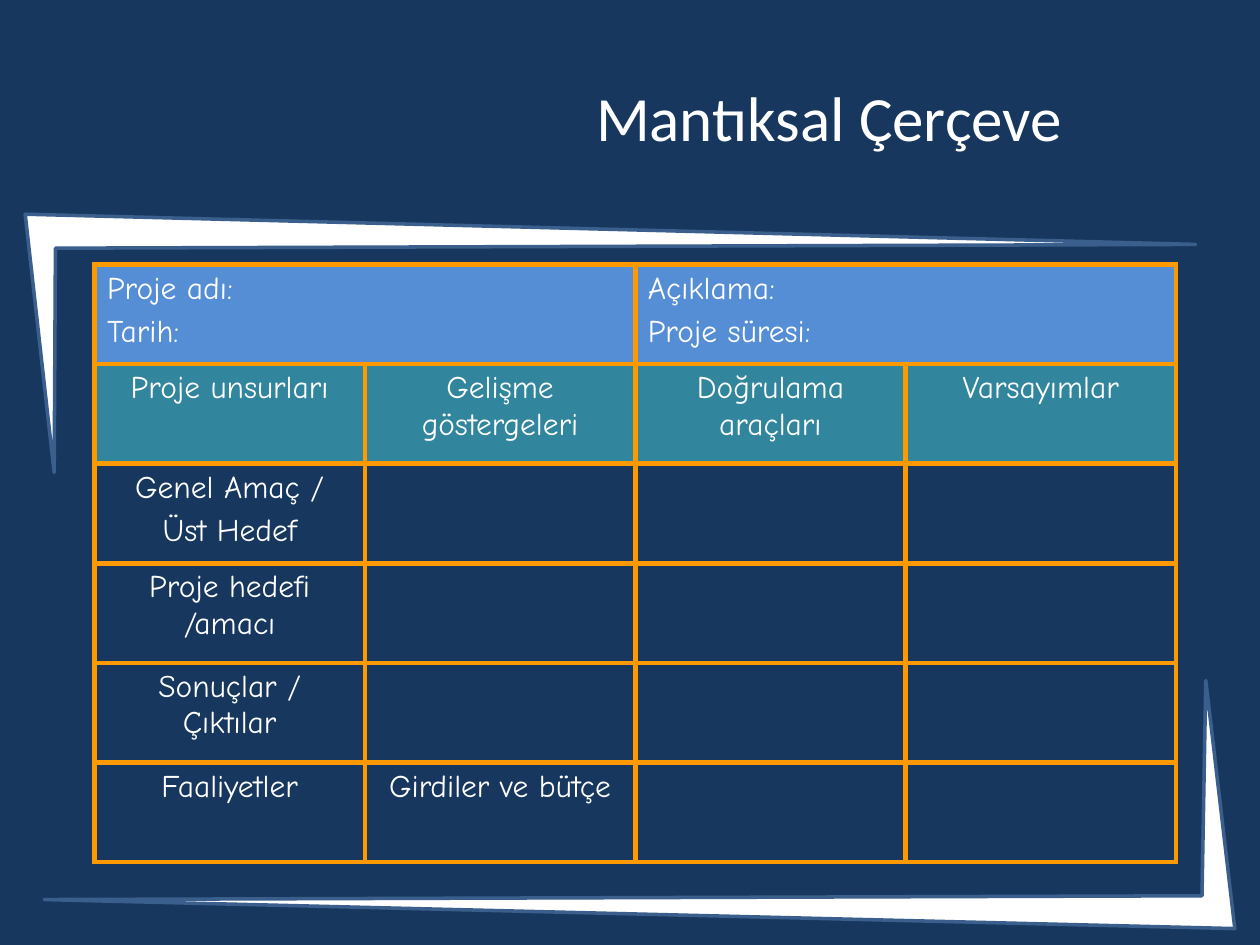
"""Build the logical framework slide: title, two corner brackets and a project table."""
from lxml import etree
from pptx import Presentation
from pptx import util as u
from pptx.dml.color import RGBColor
from pptx.enum import text
from pptx.oxml import ns

NAVY = RGBColor(0x17, 0x37, 0x5E)
WHITE = RGBColor(0xFF, 0xFF, 0xFF)
OUTLINE = RGBColor(0x3A, 0x5F, 0x8C)
BLUE = RGBColor(0x55, 0x8E, 0xD5)
TEAL = RGBColor(0x31, 0x85, 0x9C)
ORANGE = RGBColor(0xFF, 0x99, 0x00)

TOP_BRACKET = [(14.4, 122.4), (683.28, 139.68), (31.68, 141.84), (30.96, 270)]
BOTTOM_BRACKET = [(705.6, 530.64), (25.2, 514.08), (686.88, 511.92), (689.04, 388.8)]

ROWS = [
    ["Proje adı:\nTarih:", "", "Açıklama:\nProje süresi:", ""],
    ["Proje unsurları", "Gelişme göstergeleri", "Doğrulama araçları", "Varsayımlar"],
    ["Genel Amaç /\nÜst Hedef", "", "", ""],
    ["Proje hedefi /amacı", "", "", ""],
    ["Sonuçlar / Çıktılar", "", "", ""],
    ["Faaliyetler", "Girdiler ve bütçe", "", ""],
]
ROW_FILLS = {0: BLUE, 1: TEAL}
COLUMN_WIDTH = 154.5
ROW_HEIGHT = 56.9


def set_font(paragraph, name, size):
    paragraph.font.name = name
    paragraph.font.size = u.Pt(size)
    paragraph.font.color.rgb = WHITE


def add_bracket(slide, points):
    corners = [(u.Pt(x), u.Pt(y)) for x, y in points]
    builder = slide.shapes.build_freeform(*corners[0])
    builder.add_line_segments(corners[1:], close=True)
    shape = builder.convert_to_shape()
    shape.shadow.inherit = False
    shape.fill.solid()
    shape.fill.fore_color.rgb = WHITE
    shape.line.color.rgb = OUTLINE
    shape.line.width = u.Pt(2)


def add_title(slide, title):
    box = slide.shapes.add_textbox(u.Pt(263.5), u.Pt(21.6), u.Pt(420.5), u.Pt(90))
    frame = box.text_frame
    frame.word_wrap = True
    frame.vertical_anchor = text.MSO_ANCHOR.MIDDLE
    paragraph = frame.paragraphs[0]
    paragraph.text = title
    paragraph.alignment = text.PP_ALIGN.CENTER
    set_font(paragraph, "Calibri", 36)


def set_borders(cell):
    properties = cell._tc.get_or_add_tcPr()
    for side in ("a:lnL", "a:lnR", "a:lnT", "a:lnB"):
        line = etree.SubElement(properties, ns.qn(side), w=str(u.Pt(3)))
        fill = etree.SubElement(line, ns.qn("a:solidFill"))
        etree.SubElement(fill, ns.qn("a:srgbClr"), val=str(ORANGE))


def format_cell(cell, content, fill, alignment):
    set_borders(cell)
    if fill is None:
        cell.fill.background()
    else:
        cell.fill.solid()
        cell.fill.fore_color.rgb = fill
    cell.text = content
    for index, paragraph in enumerate(cell.text_frame.paragraphs):
        paragraph.alignment = alignment
        if index:
            paragraph.space_before = u.Pt(4)
        set_font(paragraph, "Comic Neue", 18)


def add_framework_table(slide):
    row_count, column_count = len(ROWS), len(ROWS[0])
    table = slide.shapes.add_table(
        row_count, column_count, u.Pt(54), u.Pt(151.2),
        u.Pt(COLUMN_WIDTH * column_count), u.Pt(ROW_HEIGHT * row_count)).table
    table.first_row = table.horz_banding = False
    for column in table.columns:
        column.width = u.Pt(COLUMN_WIDTH)
    for row_index, contents in enumerate(ROWS):
        table.rows[row_index].height = u.Pt(ROW_HEIGHT)
        alignment = text.PP_ALIGN.CENTER if row_index else text.PP_ALIGN.LEFT
        for column_index, content in enumerate(contents):
            format_cell(table.cell(row_index, column_index), content,
                        ROW_FILLS.get(row_index), alignment)
    for left in (0, 2):
        table.cell(0, left).merge(table.cell(0, left + 1))


def main():
    presentation = Presentation()
    presentation.slide_width = u.Pt(720)
    presentation.slide_height = u.Pt(540)
    slide = presentation.slides.add_slide(presentation.slide_layouts[6])
    slide.background.fill.solid()
    slide.background.fill.fore_color.rgb = NAVY
    for points in (TOP_BRACKET, BOTTOM_BRACKET):
        add_bracket(slide, points)
    add_title(slide, "Mantıksal Çerçeve")
    add_framework_table(slide)
    presentation.save("out.pptx")


if __name__ == "__main__":
    main()
